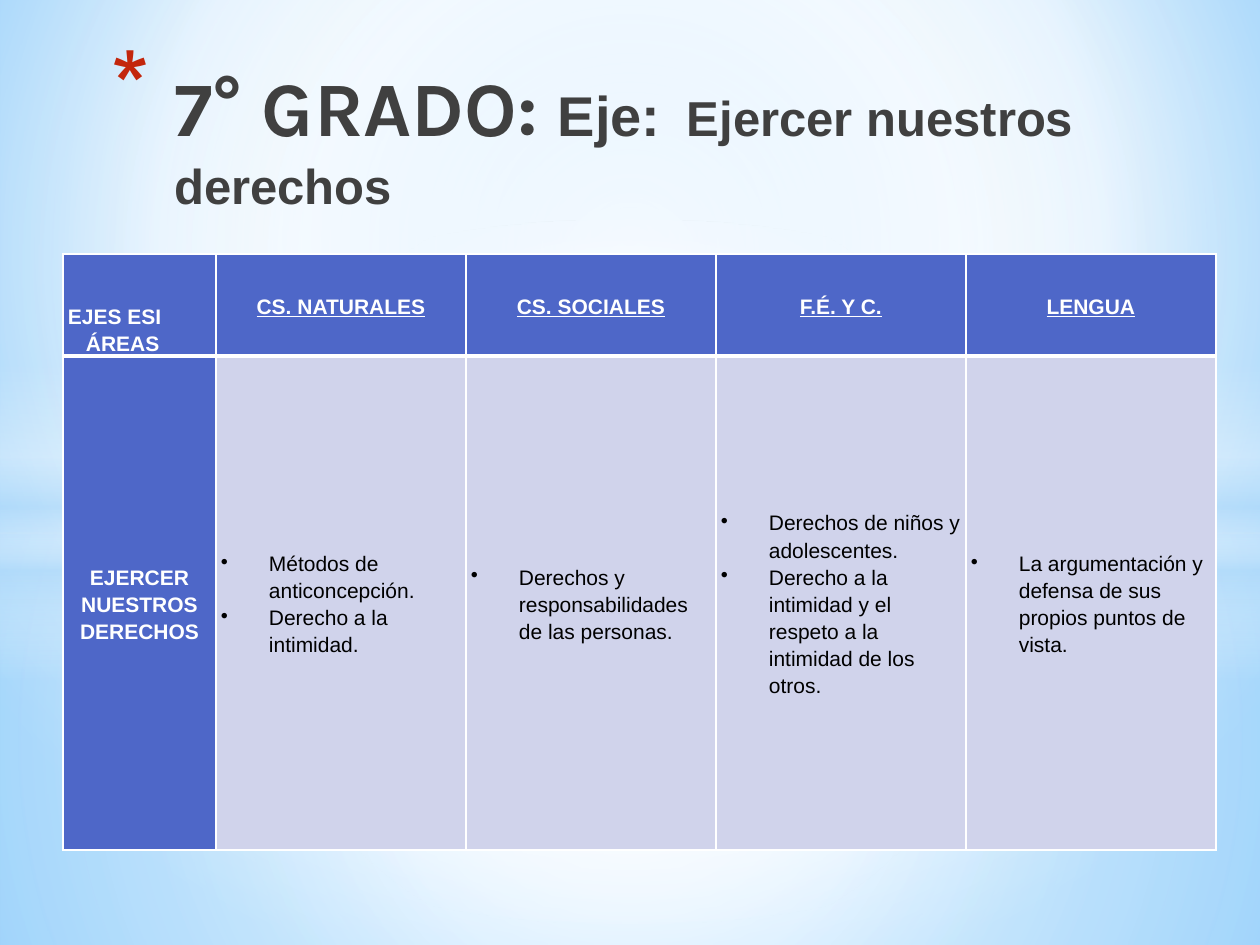
"""Builds the slide on rights education for seventh grade."""
from dataclasses import dataclass

from lxml import etree
from pptx import Presentation
from pptx import util as u
from pptx.dml.color import RGBColor
from pptx.enum import shapes, text
from pptx.oxml.ns import qn

COLORS = {
    "white": "FFFFFF", "pale": "B4DCFA", "sky": "9ED5FF", "deep": "5BB9FF",
    "title": "404040", "star": "C3260C", "header": "4E67C8",
    "body": "D0D3EB", "black": "000000",
}
CENTER = (50, 50, 50, 50)
SUBJECTS = {
    "CS. NATURALES": ["Métodos de anticoncepción.", "Derecho a la intimidad."],
    "CS. SOCIALES": ["Derechos y responsabilidades de las personas."],
    "F.É. Y C.": [
        "Derechos de niños y adolescentes.",
        "Derecho a la intimidad y el respeto a la intimidad de los otros.",
    ],
    "LENGUA": ["La argumentación y defensa de sus propios puntos de vista."],
}


def px(length):
    return u.Emu(round(length * 914400 / 126))


def node(parent, tag, **attributes):
    return etree.SubElement(parent, qn(tag), {k: str(v) for k, v in attributes.items()})


@dataclass
class Deck:
    slide: object
    font: str = "Arial"

    def gradient(self, parent, stops, focus=None):
        old = parent.find(qn("a:solidFill"))
        fill = etree.Element(qn("a:gradFill"), rotWithShape="1")
        stop_list = node(fill, "a:gsLst")
        for position, color, opacity in stops:
            stop = node(stop_list, "a:gs", pos=position * 1000)
            value = node(stop, "a:srgbClr", val=COLORS[color])
            if opacity < 100:
                node(value, "a:alpha", val=opacity * 1000)
        if focus:
            way = node(fill, "a:path", path="circle")
            node(way, "a:fillToRect", **{k: v * 1000 for k, v in zip("ltrb", focus)})
        else:
            node(fill, "a:lin", ang=5400000, scaled=0)
        parent.replace(old, fill)

    def background(self, stops, focus):
        self.slide.background.fill.solid()
        self.gradient(self.slide.element.find(".//" + qn("p:bgPr")), stops, focus)

    def glow(self, kind, left, top, width, height, stops, focus=None):
        shape = self.slide.shapes.add_shape(kind, px(left), px(top), px(width), px(height))
        shape.shadow.inherit = False
        shape.line.fill.background()
        shape.fill.solid()
        self.gradient(shape.element.spPr, stops, focus)

    def run(self, paragraph, words, size, color, font=None, bold=True, underline=False):
        run = paragraph.add_run()
        run.text = words
        run.font.name = font or self.font
        run.font.size = u.Pt(size)
        run.font.bold = bold
        run.font.underline = underline
        run.font.color.rgb = RGBColor.from_string(COLORS[color])

    def bullet(self, paragraph, mark, margin, hanging, color=None, percent=100):
        properties = paragraph._p.get_or_add_pPr()
        properties.set("marL", str(px(margin)))
        properties.set("indent", str(-px(hanging)))
        if color:
            node(node(properties, "a:buClr"), "a:srgbClr", val=COLORS[color])
        node(properties, "a:buSzPct", val=percent * 1000)
        node(properties, "a:buChar", char=mark)

    def title(self, left, top, width, height, runs):
        frame = self.slide.shapes.add_textbox(px(left), px(top), px(width), px(height)).text_frame
        frame.word_wrap = True
        frame.margin_top = px(16)
        paragraph = frame.paragraphs[0]
        self.bullet(paragraph, "*", 88, 63, "star", 128)
        for words, size, font in runs:
            self.run(paragraph, words, size, "title", font)

    def table(self, left, top, widths, heights):
        table = self.slide.shapes.add_table(
            len(heights), len(widths), px(left), px(top), px(sum(widths)), px(sum(heights))
        ).table
        table.first_row = table.horz_banding = False
        for column, width in zip(table.columns, widths):
            column.width = px(width)
        for row, height in zip(table.rows, heights):
            row.height = px(height)
        return table

    def cell(self, cell, lines, fill, color="white", bottom=1, top=1, align=None,
             anchor=text.MSO_ANCHOR.MIDDLE, underline=False, bullets=False, indents=()):
        cell.margin_left = cell.margin_right = px(5)
        cell.margin_top = cell.margin_bottom = 0
        cell.vertical_anchor = anchor
        properties = cell._tc.get_or_add_tcPr()
        for side, weight in zip("LRTB", (1, 1, top, bottom)):
            border = node(properties, "a:ln" + side, w=u.Pt(weight))
            node(node(border, "a:solidFill"), "a:srgbClr", val=COLORS["white"])
        cell.fill.solid()
        cell.fill.fore_color.rgb = RGBColor.from_string(COLORS[fill])
        frame = cell.text_frame
        for index, words in enumerate(lines):
            paragraph = frame.add_paragraph() if index else frame.paragraphs[0]
            paragraph.line_spacing = 1.15
            paragraph.alignment = align
            if bullets:
                self.bullet(paragraph, "•", 48, 48)
            elif indents:
                paragraph._p.get_or_add_pPr().set("marL", str(px(indents[index])))
            self.run(paragraph, words, 12, color, bold=not bullets, underline=underline)


def main():
    presentation = Presentation()
    presentation.slide_width, presentation.slide_height = px(1260), px(945)
    deck = Deck(presentation.slides.add_slide(presentation.slide_layouts[6]))
    kinds = shapes.MSO_SHAPE

    deck.background([(0, "sky", 100), (60, "white", 100), (100, "deep", 100)], (20, 10, 20, 60))
    deck.glow(kinds.RECTANGLE, 0, 533, 1260, 412,
              [(0, "white", 91), (37, "white", 76), (100, "pale", 79)], CENTER)
    deck.glow(kinds.RECTANGLE, 0, 0, 1260, 533,
              [(0, "white", 89), (48, "white", 62), (100, "pale", 79)], CENTER)
    deck.glow(kinds.RECTANGLE, 0, 365, 1260, 315,
              [(0, "white", 0), (29, "white", 30), (45, "pale", 40),
               (55, "white", 26), (65, "pale", 60), (100, "white", 0)])
    deck.glow(kinds.OVAL, 0, 220, 1260, 703, [(0, "white", 100), (54, "white", 0)], CENTER)

    deck.title(74, 26, 1071, 169, [
        ("7° GRADO: ", 44, "Karla"), ("Eje:", 32, None), (" ", 54, None),
        ("Ejercer nuestros derechos", 28, None),
    ])

    table = deck.table(63, 254, [153] + [250] * 4, [102, 494])
    center = text.PP_ALIGN.CENTER
    deck.cell(table.cell(0, 0), ["EJES ESI", "ÁREAS"], "header", bottom=3,
              anchor=text.MSO_ANCHOR.BOTTOM, indents=(0, 18))
    deck.cell(table.cell(1, 0), ["EJERCER NUESTROS DERECHOS"], "header", top=3, align=center)
    for column, (subject, topics) in enumerate(SUBJECTS.items(), 1):
        deck.cell(table.cell(0, column), [subject], "header", bottom=3,
                  align=center, underline=True)
        deck.cell(table.cell(1, column), topics, "body", "black", top=3, bullets=True)

    presentation.save("out.pptx")


if __name__ == "__main__":
    main()
